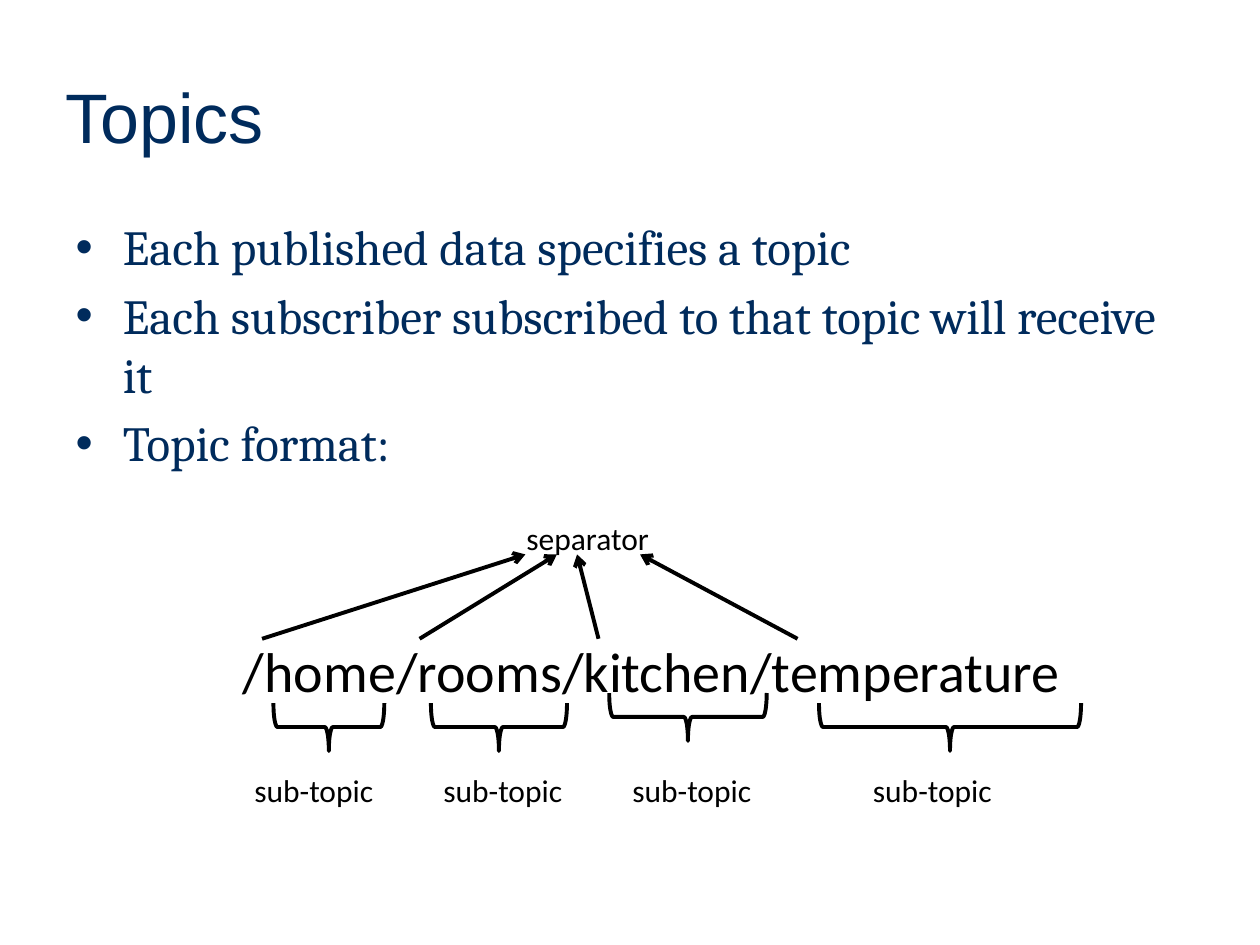
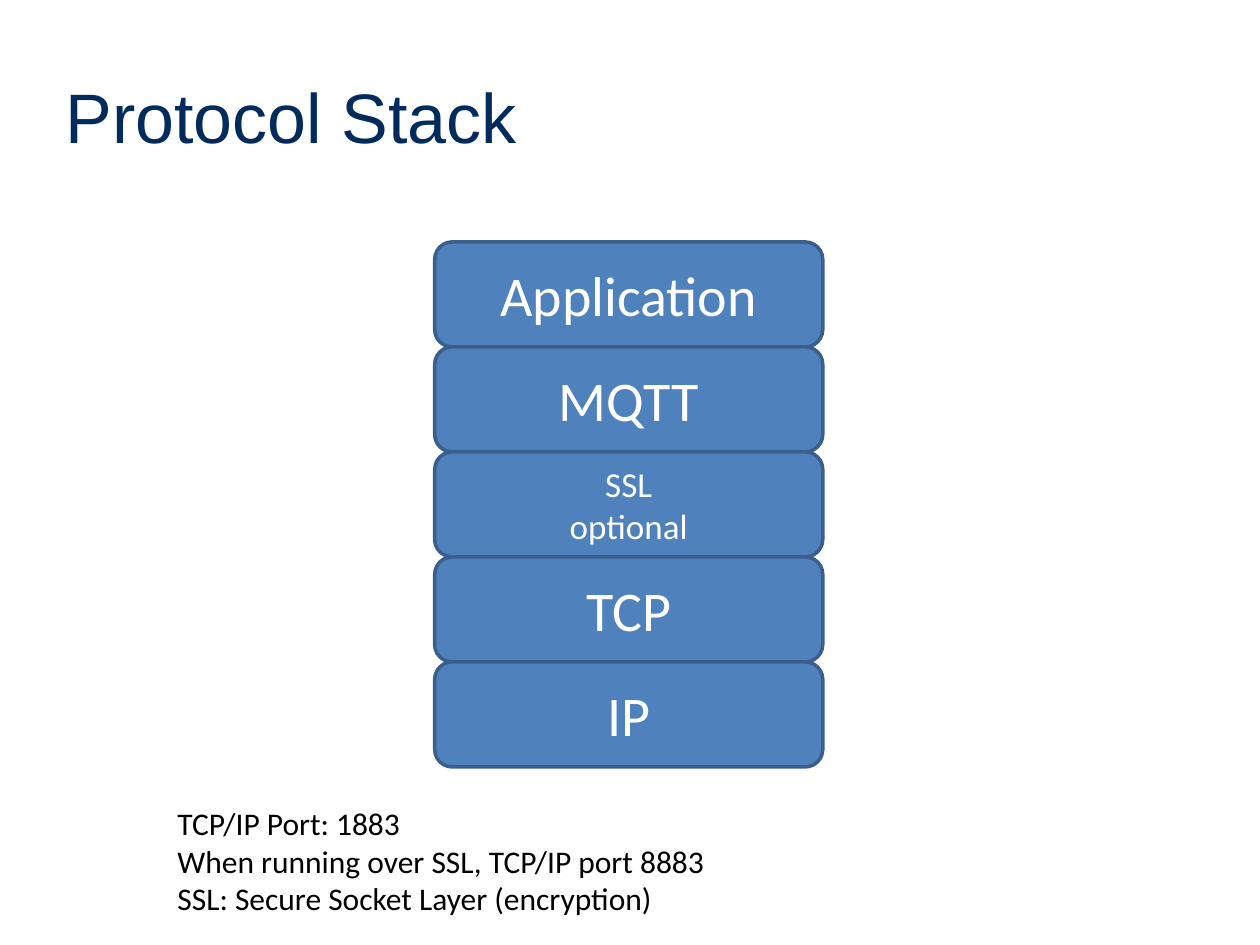
"""Builds two slides on MQTT: topic format and protocol stack."""
from pptx import Presentation
from pptx.dml.color import RGBColor
from pptx.enum import shapes, text
from pptx.oxml.ns import qn
from pptx.util import Inches, Pt
from lxml import etree

NAVY, BLACK, WHITE = "002B5C", "000000", "FFFFFF"
BLUE, EDGE = "4F81BD", "3A5F8C"


def rgb(value):
    return RGBColor.from_string(value)


def write(sp, content, size, font, color, align=text.PP_ALIGN.LEFT):
    tf = sp.text_frame
    tf.text = content
    tf.word_wrap = True
    tf.auto_size = text.MSO_AUTO_SIZE.NONE
    for p in tf.paragraphs:
        p.alignment = align
        for r in p.runs:
            r.font.size = Pt(size)
            r.font.name = font
            r.font.color.rgb = rgb(color)


prs = Presentation()
prs.slide_width, prs.slide_height = Inches(10), Inches(7.5)

slides = []
for title, layout in (("Topics", 1), ("Protocol Stack", 5)):
    s = prs.slides.add_slide(prs.slide_layouts[layout])
    sp = s.shapes.title
    sp.left, sp.top, sp.width, sp.height = map(Inches, (0.42, 0.42, 9.08, 1))
    write(sp, title, 40, "Arial", NAVY)
    sp.text_frame.vertical_anchor = text.MSO_ANCHOR.MIDDLE
    slides.append(s)
topics, stack = slides

body = topics.placeholders[1]
body.left, body.top, body.width, body.height = map(Inches, (0.5, 1.67, 9, 5.03))
points = (
    "Each published data specifies a topic",
    "Each subscriber subscribed to that topic will receive it",
    "Topic format:",
)
write(body, "\n".join(points), 28, "Cambria", NAVY)
body.text_frame.paragraphs[0].space_before = Pt(0)

labels = [
    (topics, "/home/rooms/kitchen/temperature", 1.83, 5, 6.75, 0.64, 32),
    (topics, "separator", 4.08, 4.07, 1.37, 0.4, 18),
    (stack, "TCP/IP Port: 1883\nWhen running over SSL, TCP/IP port 8883\n"
            "SSL: Secure Socket Layer (encryption)", 1.31, 6.33, 4.6, 1.01, 18),
]
labels += [(topics, "sub-topic", x, 6.07, 1.4, 0.4, 18) for x in (1.92, 3.42, 4.92, 6.83)]
for s, content, x, y, w, h, size in labels:
    sp = s.shapes.add_textbox(Inches(x), Inches(y), Inches(w), Inches(h))
    write(sp, content, size, "Calibri", BLACK)

depth = 0.38
for center, middle, span in ((2.61, 5.77, 0.88), (3.96, 5.77, 1.08), (5.46, 5.69, 1.25), (7.54, 5.77, 2.08)):
    brace = topics.shapes.add_shape(
        shapes.MSO_SHAPE.LEFT_BRACE, Inches(center - depth / 2), Inches(middle - span / 2),
        Inches(depth), Inches(span))
    brace.rotation = 270
    brace.shadow.inherit = False
    brace.fill.background()
    brace.line.color.rgb = rgb(BLACK)
    brace.line.width = Pt(2.25)

for slash_x, label_x in ((2.08, 4.17), (3.33, 4.42), (4.75, 4.58), (6.33, 5.08)):
    arrow = topics.shapes.add_connector(
        shapes.MSO_CONNECTOR.STRAIGHT, Inches(slash_x), Inches(5.07), Inches(label_x), Inches(4.4))
    arrow.line.color.rgb = rgb(BLACK)
    arrow.line.width = Pt(2.25)
    etree.SubElement(arrow.line._get_or_add_ln(), qn("a:tailEnd"), type="arrow")
    etree.SubElement(arrow._element.spPr, qn("a:effectLst"))

layers = (("Application", 32), ("MQTT", 32), ("SSL\noptional", 20), ("TCP", 32), ("IP", 32))
layer_h = 2.5 / 3
for i, (name, size) in enumerate(layers):
    sp = stack.shapes.add_shape(
        shapes.MSO_SHAPE.ROUNDED_RECTANGLE, Inches(3.45), Inches(1.92 + i * layer_h),
        Inches(3.08), Inches(layer_h))
    sp.shadow.inherit = False
    sp.fill.solid()
    sp.fill.fore_color.rgb = rgb(BLUE)
    sp.line.color.rgb = rgb(EDGE)
    sp.line.width = Pt(2)
    write(sp, name, size, "Calibri", WHITE, text.PP_ALIGN.CENTER)
    sp.text_frame.vertical_anchor = text.MSO_ANCHOR.MIDDLE

prs.save("out.pptx")
